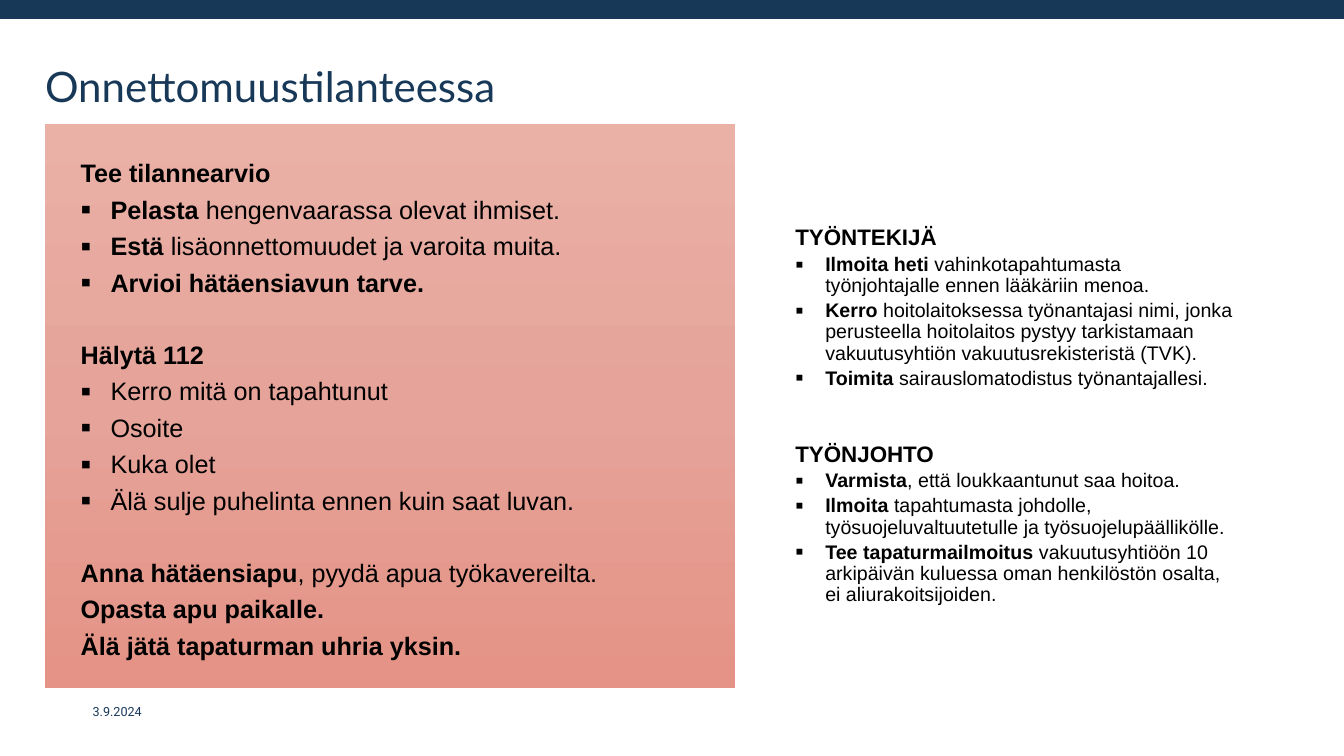
import copy
import pptx
import pptx.dml.color
import pptx.enum.shapes
import pptx.enum.text
import pptx.oxml
import pptx.oxml.ns
import pptx.util

Pt = pptx.util.Pt
ANCHOR = pptx.enum.text.MSO_ANCHOR
NAVY, BLACK, WHITE = "183858", "000000", "FFFFFF"


def color(hex_value):
    return pptx.dml.color.RGBColor.from_string(hex_value)


def write(box, paragraphs, font, ink, margins, anchor=ANCHOR.TOP, line_spacing=None):
    """Each paragraph: (bulleted, size, space before, [(text, bold), ...])."""
    frame = box.text_frame
    layout = dict(zip(("margin_left", "margin_top", "margin_right", "margin_bottom"),
                      map(Pt, margins)), word_wrap=True, vertical_anchor=anchor)
    for name, value in layout.items():
        setattr(frame, name, value)
    for index, (bulleted, size, before, spans) in enumerate(paragraphs):
        para = frame.add_paragraph() if index else frame.paragraphs[0]
        para.alignment = pptx.enum.text.PP_ALIGN.LEFT
        para.line_spacing = line_spacing
        if index:
            para.space_before = Pt(before)
        if bulleted:
            properties = para._p.get_or_add_pPr()
            properties.set("marL", str(Pt(21.4)))
            properties.set("indent", str(-Pt(21.4)))
            for xml in (f'<a:buClr %s><a:srgbClr val="{ink}"/></a:buClr>',
                        '<a:buSzPct %s val="120000"/>',
                        '<a:buFont %s typeface="Arial"/>',
                        '<a:buChar %s char="▪"/>'):
                properties.append(pptx.oxml.parse_xml(xml % pptx.oxml.ns.nsdecls("a")))
        for text, bold in spans:
            span = para.add_run()
            span.text = text
            for name, value in {"name": font, "size": Pt(size), "bold": bold}.items():
                setattr(span.font, name, value)
            span.font.color.rgb = color(ink)


deck = pptx.Presentation()
deck.slide_width, deck.slide_height = Pt(960), Pt(540)
page = deck.slides.add_slide(deck.slide_layouts[6])

# Rectangles: top bar, emergency panel, responsibilities panel
panels = []
for left, top, width, height, fill in (
    (0, 0, 960, 13.6, NAVY),
    (32.2, 88.6, 493, 402.6, None),
    (561, 136, 327.6, 329.8, WHITE),
):
    panel = page.shapes.add_shape(pptx.enum.shapes.MSO_SHAPE.RECTANGLE,
                                  Pt(left), Pt(top), Pt(width), Pt(height))
    panel.shadow.inherit = False
    panel.line.fill.background()
    if fill:
        panel.fill.solid()
        panel.fill.fore_color.rgb = color(fill)
    panels.append(panel)
top_bar, emergency, duties = panels

# Three-stop gradient, light at the top
emergency.fill.gradient()
emergency.fill.gradient_angle = 270
first_stop = emergency._element.spPr.find(".//" + pptx.oxml.ns.qn("a:gs"))
first_stop.addnext(copy.deepcopy(first_stop))
for stop, position, tint in zip(emergency.fill.gradient_stops, (0, 0.5, 1),
                                ("EAB1A7", "E5A399", "E59386")):
    stop.position = position
    stop.color.rgb = color(tint)

# Title and date
for left, top, width, height, text, size, font, anchor in (
    (32.2, 43.2, 895.7, 79.9, "Onnettomuustilanteessa", 30, "Lato", ANCHOR.TOP),
    (66.2, 502.6, 96.5, 11.5, "3.9.2024", 9, "Roboto", ANCHOR.MIDDLE),
):
    box = page.shapes.add_textbox(Pt(left), Pt(top), Pt(width), Pt(height))
    write(box, [(False, size, 0, [(text, False)])], font, NAVY, (0, 0, 0, 0), anchor)

# Emergency steps; a new group starts one line lower
STEP, GROUP = 4.5, 29.7
steps = [
    (False, STEP, [("Tee tilannearvio", True)]),
    (True, STEP, [("Pelasta ", True), ("hengenvaarassa olevat ihmiset.", False)]),
    (True, STEP, [("Estä ", True), ("lisäonnettomuudet ja varoita muita.", False)]),
    (True, STEP, [("Arvioi hätäensiavun tarve.", True)]),
    (False, GROUP, [("Hälytä 112", True)]),
    (True, STEP, [("Kerro mitä on tapahtunut", False)]),
    (True, STEP, [("Osoite", False)]),
    (True, STEP, [("Kuka olet", False)]),
    (True, STEP, [("Älä sulje puhelinta ennen kuin saat luvan.", False)]),
    (False, GROUP, [("Anna hätäensiapu", True), (", pyydä apua työkavereilta.", False)]),
    (False, STEP, [("Opasta apu paikalle.", True)]),
    (False, STEP, [("Älä jätä tapaturman uhria yksin.", True)]),
]
write(emergency, [(bulleted, 18, before, spans) for bulleted, before, spans in steps],
      "Arial", BLACK, (25.4, 4.5, 0, 0), ANCHOR.MIDDLE)

# Responsibilities of worker and supervisors
responsibilities = {
    "TYÖNTEKIJÄ": [
        ("Ilmoita heti ", "vahinkotapahtumasta työnjohtajalle ennen lääkäriin menoa."),
        ("Kerro", " hoitolaitoksessa työnantajasi nimi, jonka perusteella hoitolaitos "
                  "pystyy tarkistamaan vakuutusyhtiön vakuutusrekisteristä (TVK)."),
        ("Toimita", " sairauslomatodistus työnantajallesi."),
    ],
    "TYÖNJOHTO": [
        ("Varmista", ", että loukkaantunut saa hoitoa."),
        ("Ilmoita", " tapahtumasta johdolle, työsuojeluvaltuutetulle ja "
                    "työsuojelupäällikölle."),
        ("Tee tapaturmailmoitus ", "vakuutusyhtiöön 10 arkipäivän kuluessa oman "
                                   "henkilöstön osalta, ei aliurakoitsijoiden."),
    ],
}
lines = []
for heading, tasks in responsibilities.items():
    lines.append((False, 16, 38, [(heading, True)]))
    for lead, rest in tasks:
        lines.append((True, 14, 2.8, [(lead, True), (rest, False)]))
write(duties, lines, "Arial", BLACK, (7.2, 25.7, 7.2, 3.6), line_spacing=0.9)

deck.save("out.pptx")
